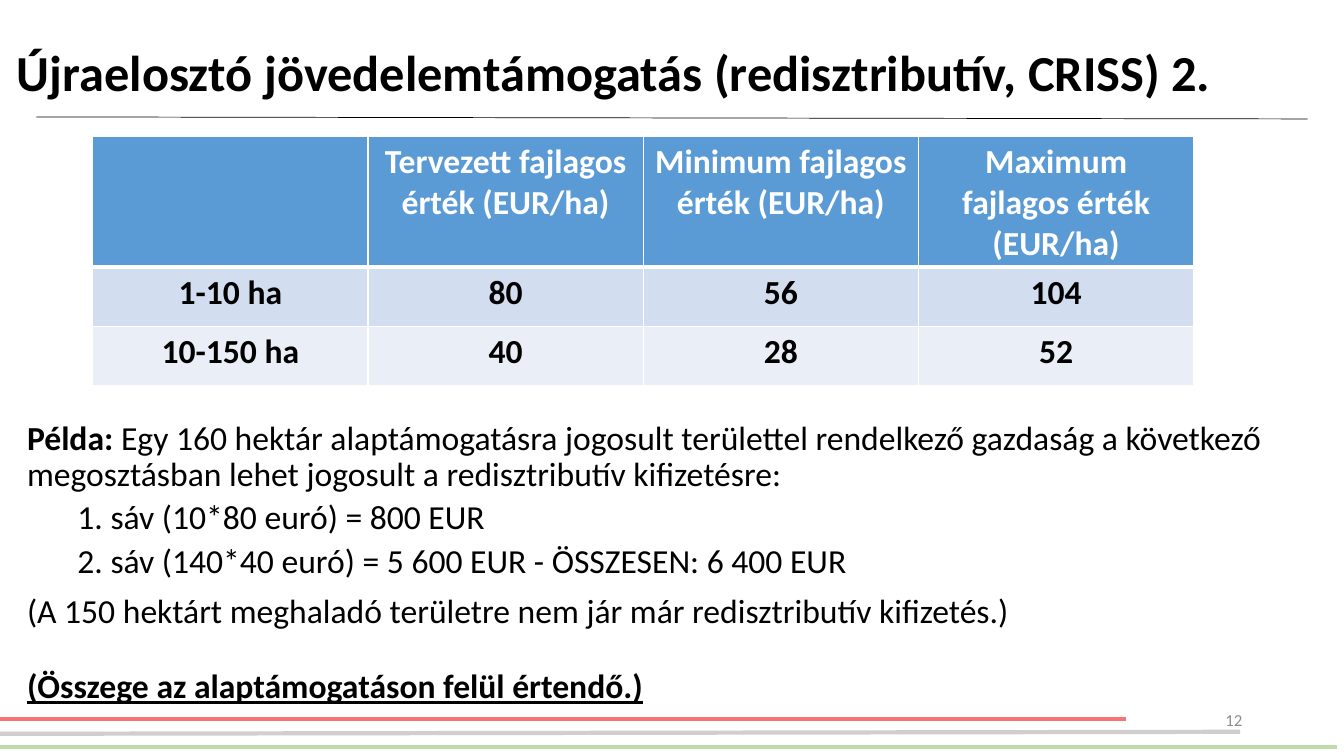
from lxml.etree import SubElement
from pptx import Presentation
from pptx.dml.color import RGBColor
from pptx.enum.shapes import MSO_CONNECTOR
from pptx.enum.text import MSO_ANCHOR, PP_ALIGN
from pptx.oxml.ns import qn
from pptx.util import Inches, Pt

COLORS = {
    "black": "000000", "white": "FFFFFF", "number": "8C8C8C",
    "red": "F97376", "green": "BEDCAA", "gray": "D0CECE",
    "header": "5B9BD5", "band1": "D2DEEF", "band2": "EAEFF7",
}
FONT = "Calibri"
LINES = [
    (0, 7.13, 11.17, 7.13, "red", 3),
    (0, 7.41, 13.26, 7.41, "green", 3),
    (0, 7.28, 12.3, 7.26, "gray", 3),
    (0.36, 1.16, 12.97, 1.18, "black", 0.5),
]
ROWS = [
    ["", "Tervezett fajlagos érték (EUR/ha)",
     "Minimum fajlagos érték (EUR/ha)", "Maximum fajlagos érték (EUR/ha)"],
    ["1-10 ha", "80", "56", "104"],
    ["10-150 ha", "40", "28", "52"],
]
ROW_STYLES = [(1.3, "header", "white"), (0.59, "band1", "black"), (0.59, "band2", "black")]
BANDS = ["1. sáv (10*80 euró) = 800 EUR",
         "2. sáv (140*40 euró) = 5 600 EUR - ÖSSZESEN: 6 400 EUR"]


def rgb(name):
    return RGBColor.from_string(COLORS[name])


def set_font(font, size, color="black", bold=False):
    font.name = FONT
    font.size = Pt(size)
    font.bold = bold
    font.color.rgb = rgb(color)


def add_line(slide, x1, y1, x2, y2, color, width):
    line = slide.shapes.add_connector(
        MSO_CONNECTOR.STRAIGHT, Inches(x1), Inches(y1), Inches(x2), Inches(y2))
    line.line.color.rgb = rgb(color)
    line.line.width = Pt(width)
    SubElement(line._element.spPr, qn("a:effectLst"))


def add_box(slide, x, y, w, h, anchor=MSO_ANCHOR.MIDDLE):
    tf = slide.shapes.add_textbox(Inches(x), Inches(y), Inches(w), Inches(h)).text_frame
    tf.word_wrap = True
    tf.vertical_anchor = anchor
    return tf


def add_label(slide, x, y, w, h, text, size, color, bold, align):
    p = add_box(slide, x, y, w, h).paragraphs[0]
    p.text = text
    p.alignment = align
    p.line_spacing = 0.9
    set_font(p.font, size, color, bold)


def add_paragraph(tf, text, before, bold=False):
    p = tf.add_paragraph()
    p.text = text
    p.line_spacing = 0.9
    p.space_before = Pt(before)
    set_font(p.font, 24, bold=bold)
    return p


def add_example(slide):
    tf = add_box(slide, 0.17, 4.13, 13, 2.95, MSO_ANCHOR.TOP)
    p = tf.paragraphs[0]
    p.line_spacing = 0.9
    for text, bold in [
        ("Példa:", True),
        (" Egy 160 hektár alaptámogatásra jogosult területtel rendelkező gazdaság a következő "
         "megosztásban lehet jogosult a redisztributív kifizetésre:", False),
    ]:
        r = p.add_run()
        r.text = text
        set_font(r.font, 24, bold=bold)
    for text in BANDS:
        p = add_paragraph(tf, text, 5)
        p.level = 1
        pPr = p._p.get_or_add_pPr()
        pPr.set("marL", str(Inches(0.5)))
        pPr.set("indent", "0")
    add_paragraph(tf, "(A 150 hektárt meghaladó területre nem jár már redisztributív kifizetés.)", 10)
    p = add_paragraph(tf, "(Összege az alaptámogatáson felül értendő.)", 28, bold=True)
    p.font.underline = True


def set_borders(cell, widths):
    tcPr = cell._tc.get_or_add_tcPr()
    for i, (side, width) in enumerate(widths.items()):
        ln = tcPr.makeelement(qn(f"a:ln{side}"), {"w": str(Pt(width))})
        fill = SubElement(ln, qn("a:solidFill"))
        SubElement(fill, qn("a:srgbClr"), val=COLORS["white"])
        tcPr.insert(i, ln)


def add_rates_table(slide):
    table = slide.shapes.add_table(
        len(ROWS), len(ROWS[0]), Inches(0.92), Inches(1.35), Inches(10.92), Inches(2.48)).table
    for column in table.columns:
        column.width = Inches(2.73)
    for i, (texts, (height, fill, color)) in enumerate(zip(ROWS, ROW_STYLES)):
        table.rows[i].height = Inches(height)
        widths = {"L": 1, "R": 1, "T": 3 if i == 1 else 1, "B": 3 if i == 0 else 1}
        for j, text in enumerate(texts):
            cell = table.cell(i, j)
            cell.text = text
            cell.fill.solid()
            cell.fill.fore_color.rgb = rgb(fill)
            set_borders(cell, widths)
            p = cell.text_frame.paragraphs[0]
            p.alignment = PP_ALIGN.CENTER
            set_font(p.font, 24, color, True)


def main():
    prs = Presentation()
    prs.slide_width = Inches(13.33)
    prs.slide_height = Inches(7.5)
    slide = prs.slides.add_slide(prs.slide_layouts[6])
    for line in LINES:
        add_line(slide, *line)
    add_example(slide)
    add_label(slide, 9.42, 6.95, 3, 0.4, "12", 12, "number", False, PP_ALIGN.RIGHT)
    add_label(slide, 0.07, 0.16, 12.77, 1.18,
              "Újraelosztó jövedelemtámogatás (redisztributív, CRISS) 2.",
              36, "black", True, PP_ALIGN.LEFT)
    add_rates_table(slide)
    prs.save("out.pptx")


if __name__ == "__main__":
    main()
